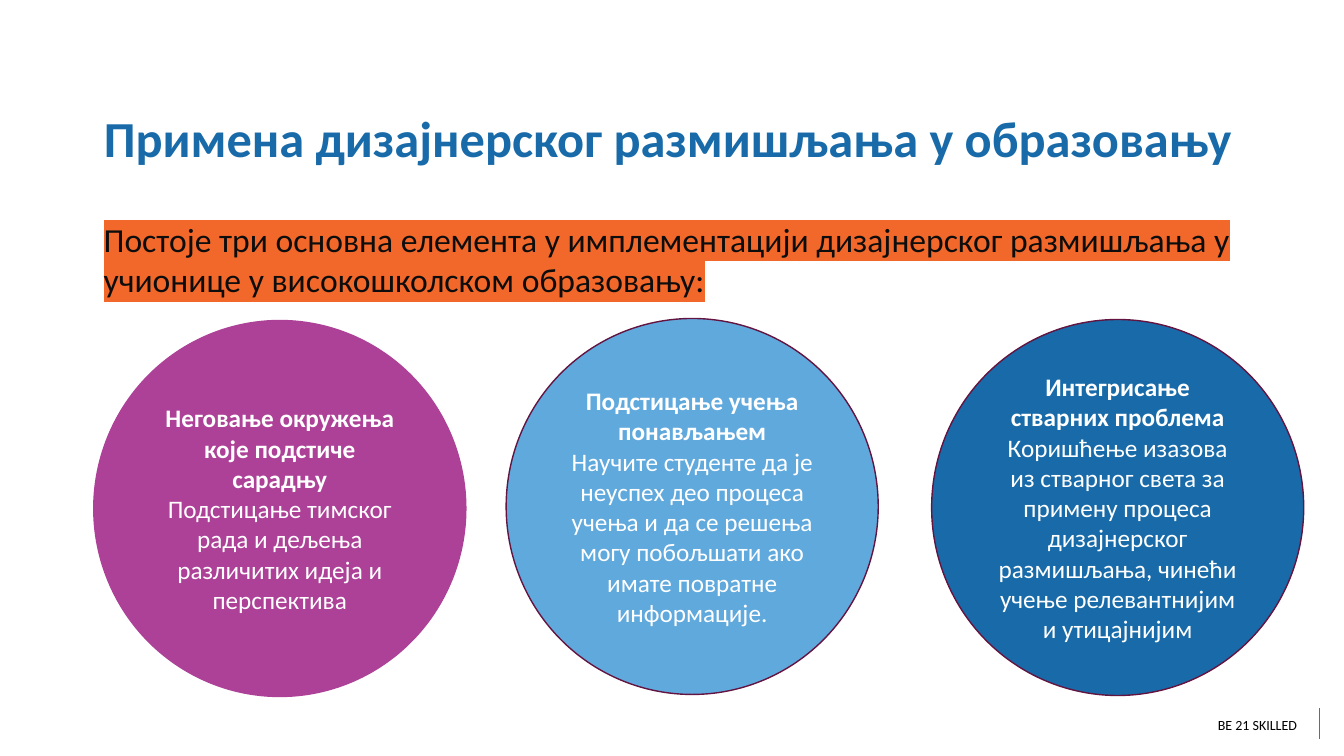
from lxml.etree import SubElement
from pptx import Presentation
from pptx.dml.color import RGBColor
from pptx.enum.shapes import MSO_CONNECTOR, MSO_SHAPE
from pptx.enum.text import MSO_ANCHOR, MSO_AUTO_SIZE, PP_ALIGN
from pptx.oxml import parse_xml
from pptx.oxml.ns import nsdecls, qn
from pptx.util import Inches, Pt

COLORS = {
    "white": "FFFFFF", "black": "000000", "ink": "0D0D0D", "blue": "186BA8",
    "sky": "60A9DD", "purple": "AD4097", "wine": "631440", "orange": "F2682A",
}
# Each circle: left, top, fill, line, heading, text
CIRCLES = [
    (0.93, 3.18, "purple", "purple",
     "Неговање окружења које подстиче сарадњу",
     "Подстицање тимског рада и дељења различитих идеја и перспектива"),
    (5.02, 3.16, "sky", "wine",
     "Подстицање учења понављањем",
     "Научите студенте да је неуспех део процеса учења и да се решења "
     "могу побољшати ако имате повратне информације."),
    (9.24, 3.17, "blue", "wine",
     "Интегрисање стварних проблема",
     "Коришћење изазова из стварног света за примену процеса дизајнерског "
     "размишљања, чинећи учење релевантнијим и утицајнијим"),
]


def color(name):
    return RGBColor.from_string(COLORS[name])


def style(font, size, tone, bold=False):
    font.name, font.size, font.bold = "Calibri", Pt(size), bold
    font.color.rgb = color(tone)


def add_title(slide, left, top, width, height):
    title = slide.shapes.title
    title.left, title.top = Inches(left), Inches(top)
    title.width, title.height = Inches(width), Inches(height)
    frame = title.text_frame
    frame.text = "Примена дизајнерског размишљања у образовању"
    frame.auto_size = MSO_AUTO_SIZE.NONE
    frame.vertical_anchor = MSO_ANCHOR.TOP
    para = frame.paragraphs[0]
    para.alignment = PP_ALIGN.LEFT
    style(para.font, 36, "blue", True)


def add_text(slide, left, top, width, height, text):
    box = slide.shapes.add_textbox(
        Inches(left), Inches(top), Inches(width), Inches(height))
    box.text_frame.word_wrap = True
    para = box.text_frame.paragraphs[0]
    para.text = text
    return para


def add_intro(slide, left, top, width, height):
    para = add_text(
        slide, left, top, width, height,
        "Постоје три основна елемента у имплементацији дизајнерског "
        "размишљања у учионице у високошколском образовању:")
    run = para.runs[0]
    style(run.font, 24, "ink")
    # Highlight belongs right after the text fill
    mark = parse_xml(
        f'<a:highlight {nsdecls("a")}><a:srgbClr val="{COLORS["orange"]}"/>'
        "</a:highlight>")
    run.font._element.find(qn("a:solidFill")).addnext(mark)


def add_circle(slide, left, top, width, height, fill, line, head, text):
    oval = slide.shapes.add_shape(
        MSO_SHAPE.OVAL, Inches(left), Inches(top), Inches(width), Inches(height))
    oval.shadow.inherit = False
    oval.fill.solid()
    oval.fill.fore_color.rgb = color(fill)
    oval.line.color.rgb = color(line)
    oval.line.width = Pt(1)
    frame = oval.text_frame
    frame.word_wrap = True
    frame.vertical_anchor = MSO_ANCHOR.MIDDLE
    frame.text = f"{head}\n{text}"
    for para, bold in zip(frame.paragraphs, (True, False)):
        para.alignment = PP_ALIGN.CENTER
        style(para.font, 18, "white", bold)


def add_footer(slide, left, top, width, height):
    para = add_text(slide, left, top, width, height, "BE 21 SKILLED")
    style(para.font, 10, "black")
    # Rule at the right of the footer
    x = Inches(left + 1.11)
    rule = slide.shapes.add_connector(
        MSO_CONNECTOR.STRAIGHT, x, Inches(top + height), x, Inches(top - 0.04))
    rule.line.color.rgb = color("purple")
    rule.line.width = Pt(0.75)
    SubElement(rule._element.spPr, qn("a:effectLst"))


def main():
    deck = Presentation()
    deck.slide_width, deck.slide_height = Inches(13.33), Inches(7.5)
    slide = deck.slides.add_slide(deck.slide_layouts[5])
    add_footer(slide, 11.98, 7.06, 1.3, 0.27)
    add_title(slide, 0.93, 1.01, 11.46, 0.88)
    add_intro(slide, 0.93, 2.12, 11.46, 4.77)
    for left, top, *rest in CIRCLES:
        add_circle(slide, left, top, 3.69, 3.73, *rest)
    deck.save("out.pptx")


if __name__ == "__main__":
    main()
